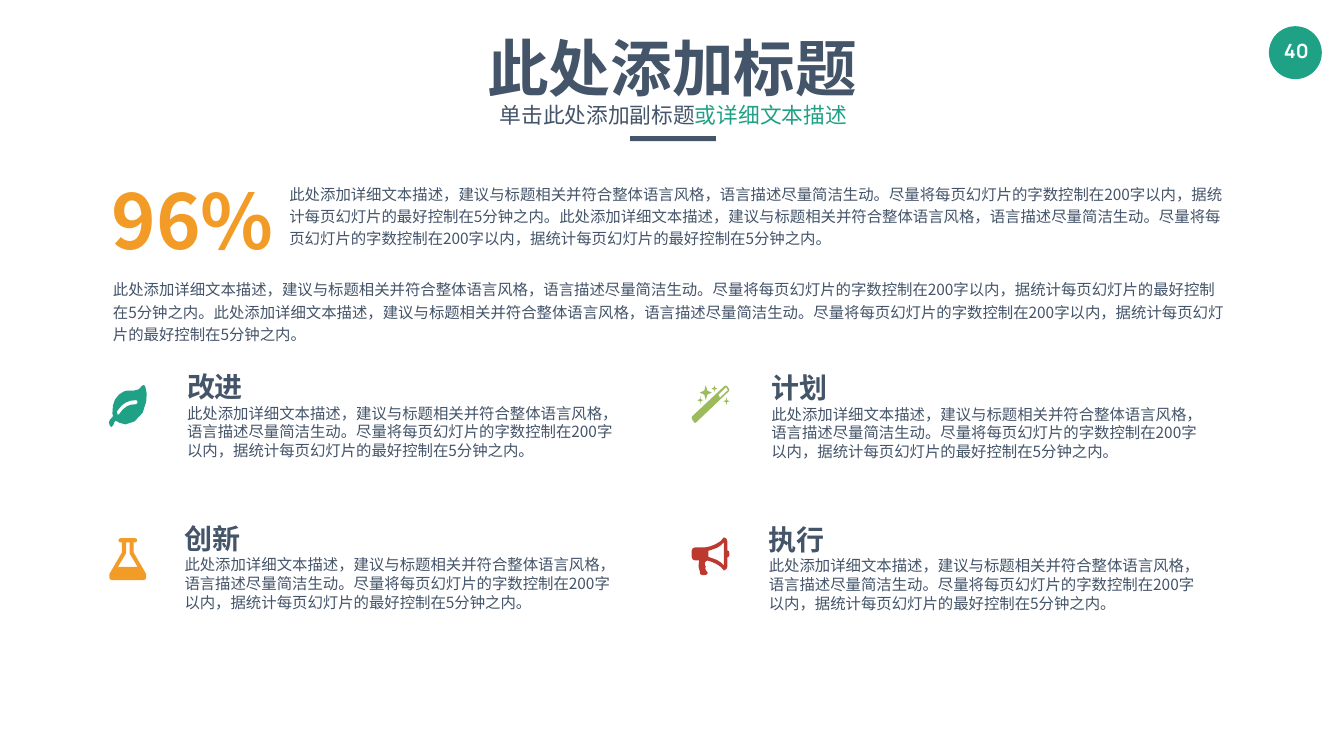
import math

import pptx
import pptx.dml.color
import pptx.enum.shapes
import pptx.enum.text
import pptx.oxml
import pptx.oxml.ns
import pptx.util

Inches = pptx.util.Inches
Pt = pptx.util.Pt
ALIGN = pptx.enum.text.PP_ALIGN
SHAPES = pptx.enum.shapes.MSO_SHAPE

COLORS = {
    "ink": "445469",
    "green": "1EA185",
    "orange": "F29B26",
    "lime": "9BBB5C",
    "red": "BD392F",
    "white": "FFFFFF",
}
CJK_FONT = "Noto Sans CJK SC"
LINE_HEIGHT = 1.21  # single line pitch as a share of the text size

DESCRIPTION = (
    "此处添加详细文本描述，建议与标题相关并符合整体语言风格，语言描述尽量简洁生动。"
    "尽量将每页幻灯片的字数控制在200字以内，据统计每页幻灯片的最好控制在5分钟之内。"
)


def star(cx, cy, rx, ry):
    """Four-pointed sparkle whose inner corners lie at a quarter of its radii."""
    points = []
    for step in range(8):
        reach = 1 if step % 2 == 0 else 0.35
        angle = step * math.pi / 4
        points.append((cx + rx * reach * math.cos(angle),
                       cy + ry * reach * math.sin(angle)))
    return points


# Icon contours in hundredths of an inch from the icon's top left corner.
LEAF = [
    [(72, 2), (75, 17), (74, 33), (67, 55), (51, 72), (33, 78), (21, 75),
     (18, 73), (13, 71), (11, 73), (9, 79), (5, 83), (2, 81), (0, 74),
     (2, 69), (7, 64), (8, 61), (7, 56), (8, 41), (12, 29), (20, 19),
     (29, 13), (36, 11), (49, 11), (58, 9), (62, 6), (65, 2), (69, 0)],
    [(54, 38), (56, 37), (57, 34), (56, 31), (54, 30), (43, 31), (33, 35),
     (25, 41), (16, 52), (16, 55), (17, 58), (19, 59), (21, 57), (28, 48),
     (36, 42), (44, 39)],
]
WAND = [
    [(66, 1), (70, 2), (73, 6), (75, 10), (73, 13), (9, 74), (7, 75),
     (5, 74), (2, 70), (0, 65), (1, 62)],
    [(72, 10), (68, 4), (53, 19), (56, 25)],
    star(17, 30, 6, 7.5),
    star(28, 15, 12.5, 15),
    star(45, 7, 6, 7.5),
    star(69, 32, 6, 7.5),
]
FLASK = [
    [(74, 71), (74, 79), (72, 82), (68, 83), (7, 83), (3, 82), (1, 79),
     (1, 71), (26, 28), (26, 8), (23, 8), (20, 7), (19, 4), (20, 1), (23, 0),
     (52, 0), (55, 1), (56, 4), (55, 7), (52, 8), (49, 8), (49, 28)],
    [(18, 57), (57, 57), (41, 30), (41, 8), (34, 8), (34, 30)],
]
MEGAPHONE = [
    [(75, 33), (74, 38), (71, 40), (71, 58), (69, 63), (64, 66), (58, 59),
     (49, 53), (40, 49), (31, 46), (28, 48), (26, 51), (26, 55), (28, 58),
     (27, 62), (28, 65), (30, 68), (32, 71), (30, 74), (25, 75), (21, 75),
     (17, 73), (16, 67), (14, 60), (14, 53), (15, 46), (7, 46), (2, 44),
     (0, 39), (0, 27), (2, 22), (7, 20), (27, 20), (37, 18), (47, 14),
     (57, 8), (64, 0), (69, 3), (71, 8), (71, 26), (74, 28)],
    [(64, 10), (58, 16), (50, 21), (42, 24), (33, 27), (33, 39), (42, 42),
     (50, 45), (58, 50), (64, 56)],
]

# Name, icon, icon colour, icon top; read row by row.
FEATURES = [
    [("改进", LEAF, "green", 7.64), ("计划", WAND, "lime", 7.64)],
    [("创新", FLASK, "orange", 10.68), ("执行", MEGAPHONE, "red", 10.66)],
]


def rgb(color):
    return pptx.dml.color.RGBColor.from_string(COLORS[color])


def paint(shape, color):
    shape.shadow.inherit = False
    shape.fill.solid()
    shape.fill.fore_color.rgb = rgb(color)
    shape.line.fill.background()


def write(shape, text, size, color="ink", bold=False, align=ALIGN.LEFT,
          font=CJK_FONT, spacing=1.0, wrap=True, insets=(0.2, 0.1)):
    """Fill a shape with one paragraph; text is a string or (string, color) runs."""
    frame = shape.text_frame
    frame.word_wrap = wrap
    frame.auto_size = pptx.enum.text.MSO_AUTO_SIZE.NONE
    frame.vertical_anchor = pptx.enum.text.MSO_ANCHOR.TOP
    frame.margin_left = frame.margin_right = Inches(insets[0])
    frame.margin_top = frame.margin_bottom = Inches(insets[1])
    paragraph = frame.paragraphs[0]
    paragraph.alignment = align
    paragraph.space_before = Pt(0)
    paragraph.line_spacing = Pt(round(size * LINE_HEIGHT * spacing, 1))
    for words, run_color in [(text, color)] if isinstance(text, str) else text:
        run = paragraph.add_run()
        run.text = words
        run.font.name = font
        run.font.size = Pt(size)
        run.font.bold = bold
        run.font.color.rgb = rgb(run_color)
        east_asian = pptx.oxml.parse_xml(
            f'<a:ea {pptx.oxml.ns.nsdecls("a")} typeface="{font}"/>')
        run.font._element.find(pptx.oxml.ns.qn("a:latin")).addnext(east_asian)


def add_text(slide, box, text, size, **style):
    write(slide.shapes.add_textbox(*map(Inches, box)), text, size, **style)


def add_block(slide, kind, box, color):
    paint(slide.shapes.add_shape(kind, *map(Inches, box)), color)


def add_icon(slide, left, top, contours, color):
    """Draw contours as one outline, inner contours being holes."""
    builder = slide.shapes.build_freeform(*contours[0][0], scale=Inches(0.01))
    for index, contour in enumerate(contours):
        if index:
            builder.move_to(*contour[0])
        builder.add_line_segments(contour[1:], close=True)
    paint(builder.convert_to_shape(Inches(left), Inches(top)), color)


def add_header(slide):
    title = slide.shapes.title
    title.left, title.top, title.width, title.height = map(
        Inches, (6.57, 0.53, 13.52, 1.58))
    write(title, "此处添加标题", 88, bold=True, align=ALIGN.CENTER,
          insets=(0.1, 0.05))
    add_block(slide, SHAPES.RECTANGLE, (12.5, 2.7, 1.7, 0.1), "ink")
    add_text(slide, (6.98, 1.79, 12.75, 0.92),
             [("单击此处添加副标题", "ink"), ("或详细文本描述", "green")], 31,
             align=ALIGN.CENTER, spacing=1.2, insets=(0.24, 0.12))


def add_page_number(slide):
    add_block(slide, SHAPES.OVAL, (25.17, 0.52, 1.05, 1.05), "green")
    add_text(slide, (25.23, 0.66, 0.97, 0.67), "40", 28, color="white",
             bold=True, align=ALIGN.CENTER, font="Manrope", wrap=False)


def add_overview(slide):
    add_text(slide, (2.01, 3.33, 3.68, 2.02), "96%", 108, color="orange",
             bold=True, wrap=False)
    for box in [(5.54, 3.49, 18.99, 1.53), (2.04, 5.39, 22.49, 1.53)]:
        add_text(slide, box, DESCRIPTION * 2, 22, spacing=1.2)


def add_features(slide):
    for row, features in enumerate(FEATURES):
        for column, (name, icon, color, icon_top) in enumerate(features):
            left = 3.51 + 11.59 * column - 0.05 * row
            top = 7.23 + 3.01 * row + 0.02 * column
            add_icon(slide, 2.16 + 11.56 * column, icon_top, icon, color)
            add_text(slide, (left, top, 1.53, 0.88), name, 40, bold=True,
                     wrap=False)
            add_text(slide, (left, top + 0.68, 9.11, 1.31), DESCRIPTION, 22)


def main():
    deck = pptx.Presentation()
    deck.slide_width, deck.slide_height = Inches(26.66), Inches(15)
    slide = deck.slides.add_slide(deck.slide_layouts[5])
    add_page_number(slide)
    add_overview(slide)
    add_features(slide)
    add_header(slide)
    deck.save("out.pptx")


if __name__ == "__main__":
    main()
